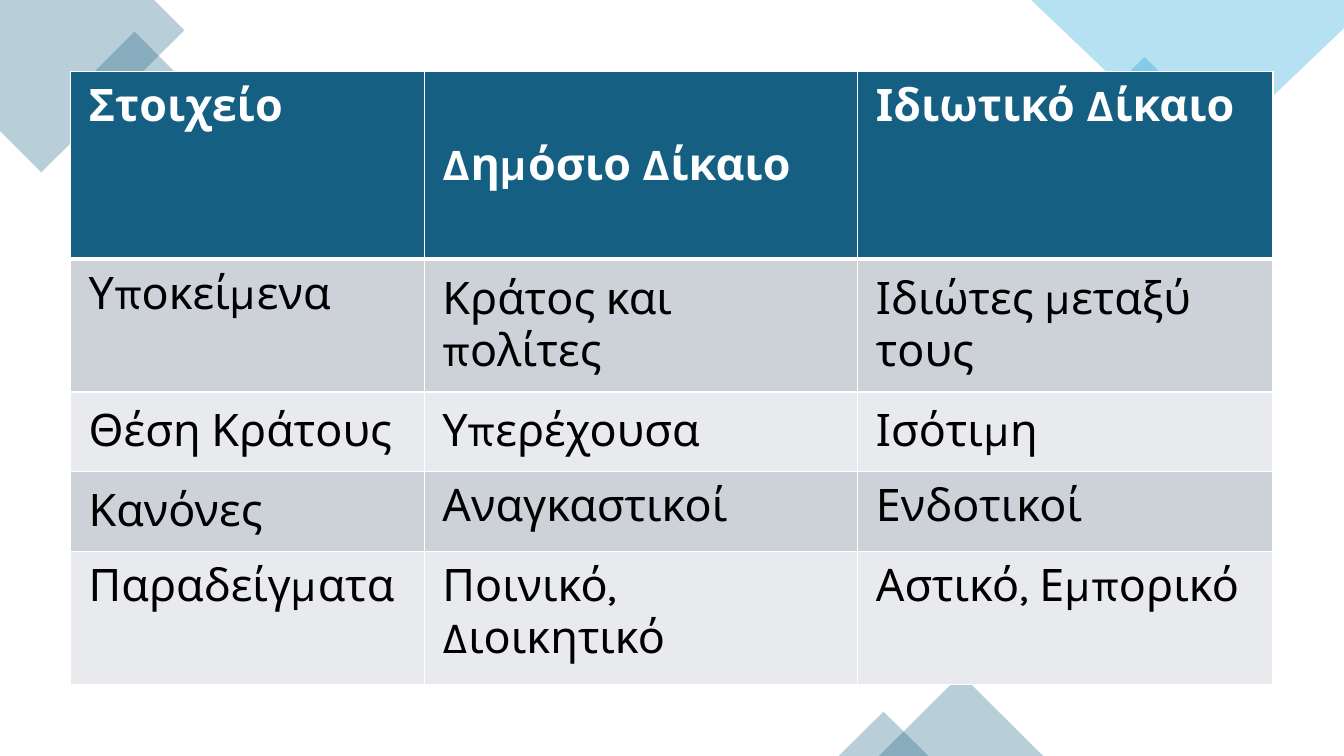
from dataclasses import dataclass

import pptx
import pptx.dml.color
import pptx.enum.shapes
import pptx.enum.text
import pptx.oxml
import pptx.oxml.ns
import pptx.util

Shape = pptx.enum.shapes.MSO_SHAPE
Anchor = pptx.enum.text.MSO_ANCHOR


@dataclass(frozen=True)
class Theme:
    font: str = "Karla"
    size: int = 32
    dark: str = "156082"
    sky: str = "0F9ED5"
    white: str = "FFFFFF"
    black: str = "000000"
    bands: tuple = ("CCD2D8", "E8EAED")
    opacity: int = 30
    thin: int = 1
    thick: int = 3


def paint(fill, color):
    fill.solid()
    fill.fore_color.rgb = pptx.dml.color.RGBColor.from_string(color)


def write(text_frame, text, font, size, color, bold=False):
    text_frame.word_wrap = True
    run = text_frame.paragraphs[0].add_run()
    run.text = text
    run.font.name = font
    run.font.size = pptx.util.Pt(size)
    run.font.bold = bold
    run.font.color.rgb = pptx.dml.color.RGBColor.from_string(color)


class SlideBuilder:
    COLUMNS, ROWS = 40, 22.5

    def __init__(self, presentation, theme):
        self.theme = theme
        self.unit = presentation.slide_width / self.COLUMNS
        self.slide = presentation.slides.add_slide(presentation.slide_layouts[6])
        paint(self.slide.background.fill, theme.white)

    def grid(self, *lengths):
        return [pptx.util.Emu(round(length * self.unit)) for length in lengths]

    def tint(self, shape, color):
        shape.shadow.inherit = False
        shape.line.fill.background()
        paint(shape.fill, color)
        color_element = shape.fill._xPr.find(".//" + pptx.oxml.ns.qn("a:srgbClr"))
        alpha = pptx.oxml.parse_xml(
            f'<a:alpha {pptx.oxml.ns.nsdecls("a")} val="{self.theme.opacity * 1000}"/>')
        color_element.append(alpha)

    def preset(self, kind, box, color, rotation=0):
        shape = self.slide.shapes.add_shape(kind, *self.grid(*box))
        shape.rotation = rotation
        self.tint(shape, color)

    def outline(self, points, color):
        start, *others = [self.grid(*point) for point in points]
        builder = self.slide.shapes.build_freeform(*start)
        builder.add_line_segments(others, close=True)
        self.tint(builder.convert_to_shape(), color)

    def border(self, cell, **widths):
        properties = cell._tc.get_or_add_tcPr()
        for side in "LRTB":
            width = pptx.util.Pt(widths.get(side, self.theme.thin))
            properties.append(pptx.oxml.parse_xml(
                f'<a:ln{side} {pptx.oxml.ns.nsdecls("a")} w="{width}"><a:solidFill>'
                f'<a:srgbClr val="{self.theme.white}"/></a:solidFill></a:ln{side}>'))

    def table(self, left, top, widths, heights, rows, middle):
        theme = self.theme
        box = self.grid(left, top, sum(widths), sum(heights))
        table = self.slide.shapes.add_table(len(rows), len(widths), *box).table
        for column, width in zip(table.columns, self.grid(*widths)):
            column.width = width
        for row, height in zip(table.rows, self.grid(*heights)):
            row.height = height
        for row_index, texts in enumerate(rows):
            header = row_index == 0
            edges = {0: {"B": theme.thick}, 1: {"T": theme.thick}}.get(row_index, {})
            for column_index, text in enumerate(texts):
                cell = table.cell(row_index, column_index)
                self.border(cell, **edges)
                paint(cell.fill, theme.dark if header else theme.bands[(row_index - 1) % 2])
                cell.margin_left = cell.margin_right = pptx.util.Inches(0.18)
                cell.margin_top = cell.margin_bottom = pptx.util.Inches(0.09)
                centred = (row_index, column_index) in middle
                cell.vertical_anchor = Anchor.MIDDLE if centred else Anchor.TOP
                write(cell.text_frame, text, font=theme.font, size=theme.size,
                      color=theme.white if header else theme.black, bold=header)


LAW_COMPARISON = [
    ("Στοιχείο", "Δημόσιο Δίκαιο", "Ιδιωτικό Δίκαιο"),
    ("Υποκείμενα", "Κράτος και πολίτες", "Ιδιώτες μεταξύ τους"),
    ("Θέση Κράτους", "Υπερέχουσα", "Ισότιμη"),
    ("Κανόνες", "Αναγκαστικοί", "Ενδοτικοί"),
    ("Παραδείγματα", "Ποινικό, Διοικητικό", "Αστικό, Εμπορικό"),
]
MIDDLE_CELLS = {(0, 1), (1, 1), (1, 2), (2, 0), (2, 1), (2, 2), (3, 0)}


def main():
    presentation = pptx.Presentation()
    presentation.slide_width = pptx.util.Inches(13.333)
    presentation.slide_height = pptx.util.Inches(7.5)
    theme = Theme()
    builder = SlideBuilder(presentation, theme)

    builder.outline([(4.59, 0), (0, 0), (0, 3.9), (1.23, 5.13), (5.49, 0.9)], theme.dark)
    builder.preset(Shape.RECTANGLE, (2.94, 1.38, 2.13, 2.13), theme.dark, rotation=315)
    builder.preset(Shape.RECTANGLE, (32.94, 2.16, 2.25, 2.25), theme.sky, rotation=315)
    builder.outline([(40, 0), (30.69, 0), (35.79, 4.86), (40, 0.84)], theme.sky)
    builder.preset(Shape.ISOSCELES_TRIANGLE, (26.16, 20.07, 4.89, 2.43), theme.dark)
    builder.preset(Shape.ISOSCELES_TRIANGLE, (24.96, 21.18, 2.67, 1.32), theme.dark)

    builder.table(2.1, 2.13, widths=(10.53, 12.9, 12.36),
                  heights=(5.58, 3.96, 2.37, 2.37, 3.96),
                  rows=LAW_COMPARISON, middle=MIDDLE_CELLS)
    presentation.save("out.pptx")


if __name__ == "__main__":
    main()
